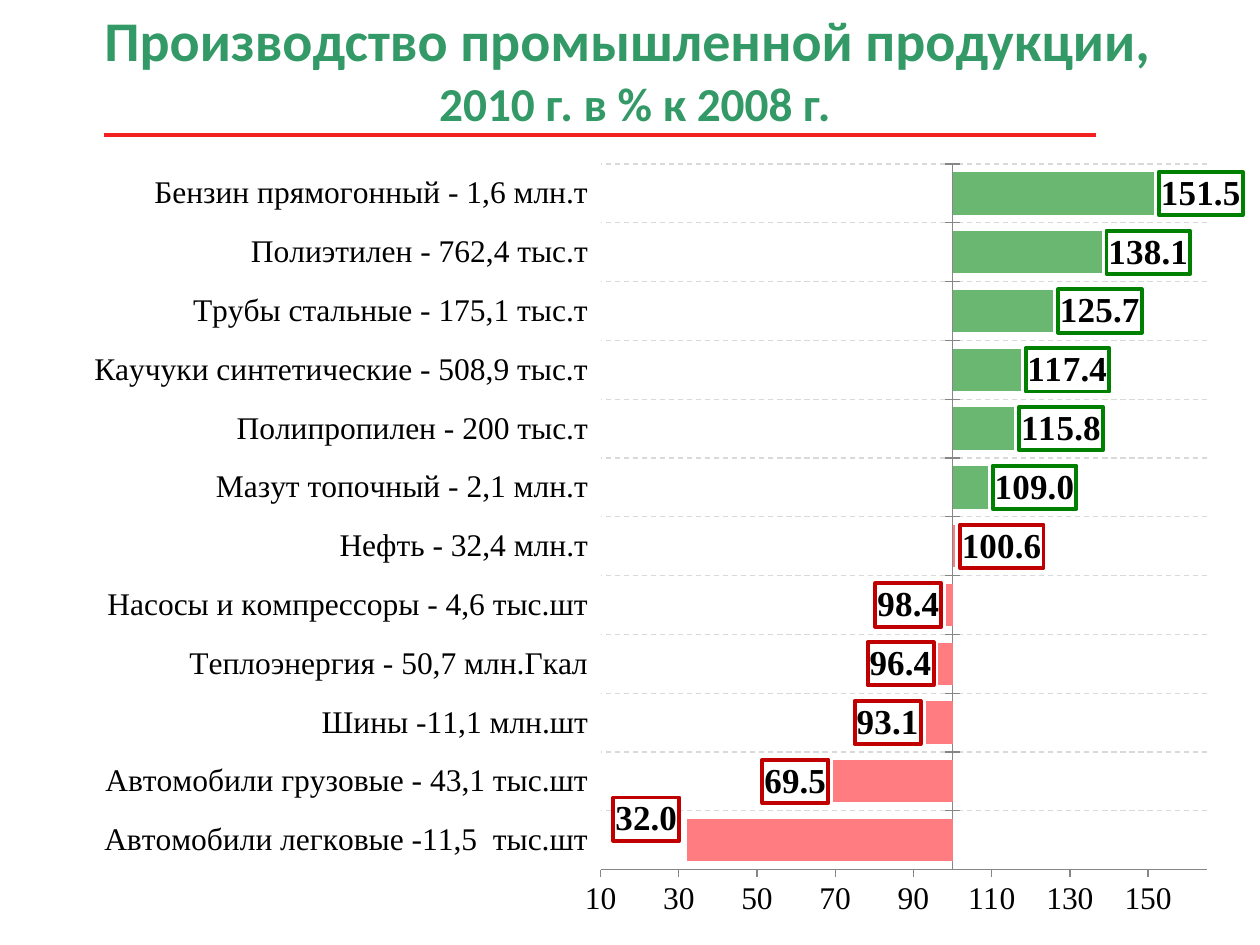
import pptx
import pptx.chart.data
import pptx.dml.color
import pptx.enum.chart
import pptx.enum.dml
import pptx.enum.shapes
import pptx.enum.text
import pptx.oxml
import pptx.oxml.ns
import pptx.util
from pptx.util import Cm, Pt

HUES = {"title": "339966", "rule": "F22222", "up": "69B770", "down": "FF7C80",
        "upbox": "008000", "downbox": "C00000", "grid": "D9D9D9",
        "axis": "868686", "text": "000000", "white": "FFFFFF"}
TITLE = [("Производство промышленной продукции,", 32), (" ", 36),
         ("2010 г. в % к 2008 г.", 27)]
GOODS = [
    ("Автомобили легковые -11,5  тыс.шт", 32.0),
    ("Автомобили грузовые - 43,1 тыс.шт", 69.5),
    ("Шины -11,1 млн.шт", 93.1),
    ("Теплоэнергия - 50,7 млн.Гкал", 96.4),
    ("Насосы и компрессоры - 4,6 тыс.шт", 98.4),
    ("Нефть - 32,4 млн.т", 100.6),
    ("Мазут топочный - 2,1 млн.т", 109.0),
    ("Полипропилен - 200 тыс.т", 115.8),
    ("Каучуки синтетические - 508,9 тыс.т", 117.4),
    ("Трубы стальные - 175,1 тыс.т", 125.7),
    ("Полиэтилен - 762,4 тыс.т", 138.1),
    ("Бензин прямогонный - 1,6 млн.т", 151.5),
]
RED = 6
PLOT = {"x": 0.453, "y": 0.036, "w": 0.503, "h": 0.871}
SHIFT = {"x": -0.002, "y": -0.026}
NUM = "#,##0.0"
E = pptx.enum.chart
NS = pptx.oxml.ns.nsdecls("c", "a")
qn = pptx.oxml.ns.qn


def rgb(name):
    return pptx.dml.color.RGBColor.from_string(HUES[name])


def put(obj, vals):
    for key, val in vals.items():
        setattr(obj, key, val)


def paint(line, hue, width):
    line.color.rgb = rgb(hue)
    line.width = Pt(width)


def node(xml):
    return pptx.oxml.parse_xml(xml)


def frame(hue):
    return node(f'<c:spPr {NS}><a:solidFill><a:srgbClr val="{HUES["white"]}"/></a:solidFill>'
                f'<a:ln w="{Pt(2.25)}"><a:solidFill><a:srgbClr val="{HUES[hue]}"/>'
                '</a:solidFill></a:ln></c:spPr>')


def place(vals, head=""):
    tags = "".join(f'<c:{key} val="{val}"/>' for key, val in vals.items())
    return node(f'<c:layout {NS}><c:manualLayout>{head}{tags}</c:manualLayout></c:layout>')


def add_title(slide):
    box = slide.shapes.add_textbox(Cm(0.1), Cm(-0.28), Cm(25.4), Cm(3.18))
    put(box.text_frame, {"word_wrap": True,
                         "vertical_anchor": pptx.enum.text.MSO_ANCHOR.MIDDLE})
    para = box.text_frame.paragraphs[0]
    para.alignment = pptx.enum.text.PP_ALIGN.CENTER
    for text, size in TITLE:
        run = para.add_run()
        run.text = text
        put(run.font, {"size": Pt(size), "bold": True, "name": "Calibri"})
        run.font.color.rgb = rgb("title")
        glow = node(f'<a:effectLst {NS}><a:outerShdw blurRad="50800" dist="38100" '
                    'dir="5400000"><a:srgbClr val="000000"><a:alpha val="40000"/>'
                    '</a:srgbClr></a:outerShdw></a:effectLst>')
        run.font.fill._xPr.find(qn("a:solidFill")).addnext(glow)
        if text == " ":
            para.add_line_break()


def add_rule(slide):
    rule = slide.shapes.add_connector(pptx.enum.shapes.MSO_CONNECTOR.STRAIGHT,
                                      Cm(2.1), Cm(2.72), Cm(22.1), Cm(2.72))
    paint(rule.line, "rule", 2.75)
    rule._element.spPr.append(node(f'<a:effectLst {NS}/>'))


def style_axes(chart):
    cat, val = chart.category_axis, chart.value_axis
    put(cat, {"tick_label_position": E.XL_TICK_LABEL_POSITION.LOW,
              "major_tick_mark": E.XL_TICK_MARK.CROSS, "has_major_gridlines": True})
    put(val, {"minimum_scale": 10, "maximum_scale": 165, "major_unit": 20,
              "crosses_at": 100, "has_major_gridlines": False,
              "major_tick_mark": E.XL_TICK_MARK.OUTSIDE})
    put(val.tick_labels, {"number_format": "0", "number_format_is_linked": False})
    grid = cat.major_gridlines.format.line
    paint(grid, "grid", 0.75)
    grid.dash_style = pptx.enum.dml.MSO_LINE.DASH
    for axis in (cat, val):
        paint(axis.format.line, "axis", 0.75)


def style_tag(tag):
    put(tag.font, {"size": Pt(20), "bold": True, "name": "Times New Roman"})
    tag.font.color.rgb = rgb("text")
    tag.position = E.XL_LABEL_POSITION.OUTSIDE_END


def style_bars(chart):
    plot = chart.plots[0]
    put(plot, {"gap_width": 39, "vary_by_categories": False})
    bars = plot.series[0]
    bars.invert_if_negative = False
    bars.format.fill.solid()
    bars.format.fill.fore_color.rgb = rgb("up")
    tags = bars.data_labels
    put(tags, {"show_value": True, "number_format": NUM,
               "number_format_is_linked": False})
    style_tag(tags)
    for i in range(RED):
        point = bars.points[i]
        point.format.fill.solid()
        point.format.fill.fore_color.rgb = rgb("down")
        style_tag(point.data_label)
    root = bars._element.find(qn("c:dLbls"))
    root.find(qn("c:numFmt")).addnext(frame("upbox"))
    for i, tag in enumerate(root.findall(qn("c:dLbl"))):
        for old in tag.findall(qn("c:spPr")):
            tag.remove(old)
        parts = [node(f'<c:numFmt {NS} formatCode="{NUM}" sourceLinked="0"/>'),
                 frame("downbox")]
        if i == 0:
            parts.insert(0, place(SHIFT))
        for part in reversed(parts):
            tag.find(qn("c:idx")).addnext(part)


def add_bars(slide):
    data = pptx.chart.data.CategoryChartData(number_format="General")
    data.categories = [name for name, _ in GOODS]
    data.add_series("Series 1", [val for _, val in GOODS])
    chart = slide.shapes.add_chart(E.XL_CHART_TYPE.BAR_CLUSTERED, Cm(1.1), Cm(2.72),
                                   Cm(24.3), Cm(16.33), data).chart
    put(chart, {"has_legend": False, "has_title": False})
    put(chart.font, {"size": Pt(18), "name": "Times New Roman"})
    chart.font.color.rgb = rgb("text")
    style_axes(chart)
    style_bars(chart)
    area = chart._chartSpace.chart.plotArea
    for old in area.findall(qn("c:layout")):
        area.remove(old)
    area.insert(0, place(PLOT, '<c:layoutTarget val="inner"/><c:xMode val="edge"/>'
                               '<c:yMode val="edge"/>'))


def main():
    deck = pptx.Presentation()
    put(deck, {"slide_width": Cm(25.4), "slide_height": Cm(19.05)})
    slide = deck.slides.add_slide(deck.slide_layouts[6])
    add_rule(slide)
    add_title(slide)
    add_bars(slide)
    deck.save("out.pptx")


if __name__ == "__main__":
    main()
